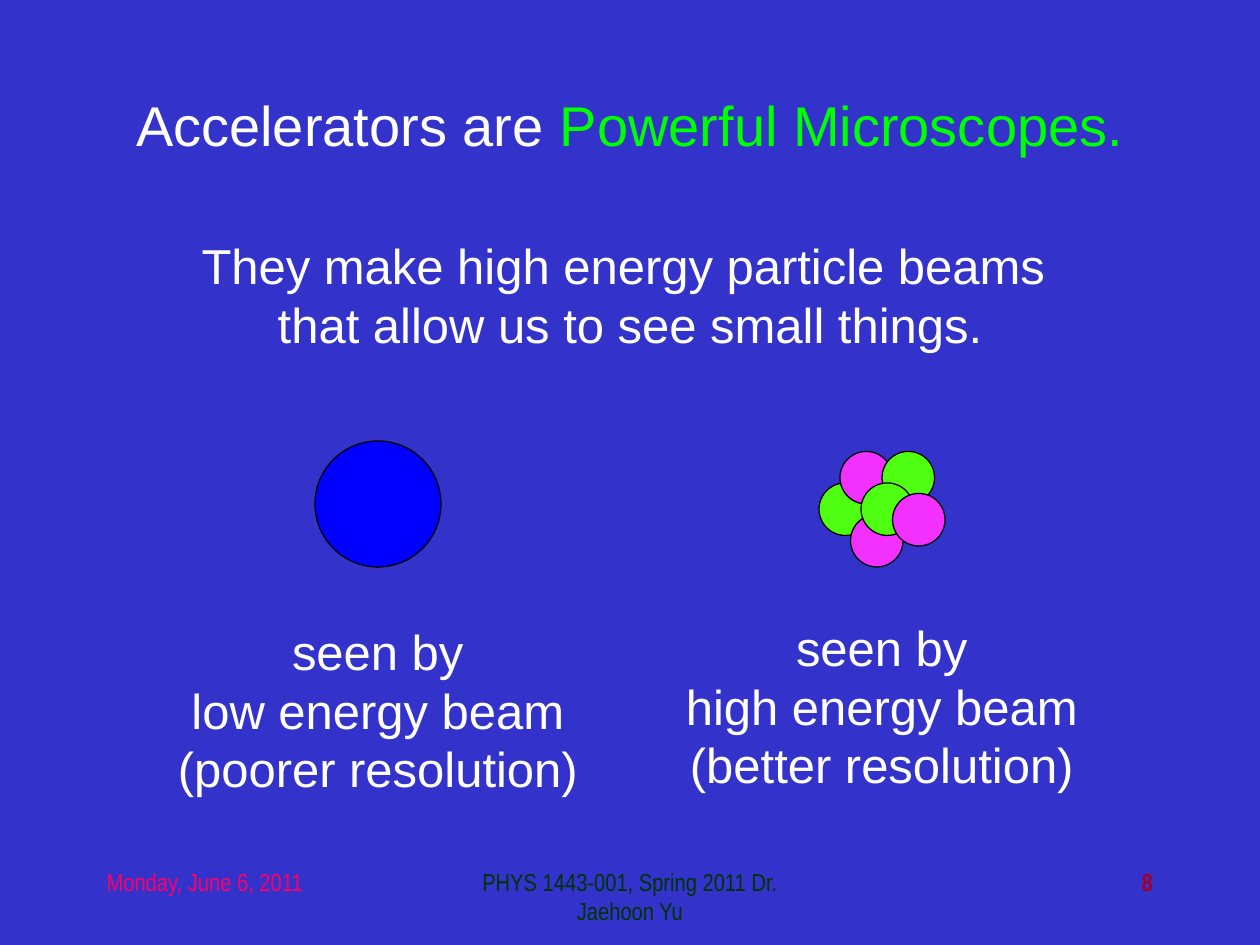
from pptx import Presentation
from pptx.dml.color import RGBColor
from pptx.enum.shapes import MSO_SHAPE as Shape
from pptx.enum.text import MSO_ANCHOR as Anchor, MSO_AUTO_SIZE as AutoSize, PP_ALIGN as Align
from pptx.util import Cm, Pt

BACKGROUND = RGBColor(0x33, 0x33, 0xCC)
WHITE = RGBColor(0xFF, 0xFF, 0xFF)
BLACK = RGBColor(0, 0, 0)
BRIGHT_GREEN = RGBColor(0, 0xFF, 0)
BLUE = RGBColor(0, 0, 0xFF)
GREEN = RGBColor(0x4E, 0xFF, 0x11)
MAGENTA = RGBColor(0xF2, 0x30, 0xFF)
DATE_PINK = RGBColor(0xFF, 0, 0x66)
FOOTER_GREEN = RGBColor(0, 0x33, 0)
NUMBER_RED = RGBColor(0xA5, 0, 0x21)

LINE_FACTOR = 1.2
NUCLEON_STEP = 0.2117
NUCLEUS_LEFT, NUCLEUS_TOP = 16.51, 9.1
NUCLEONS = [
    (0, 3, GREEN),
    (2, 0, MAGENTA),
    (3, 6, MAGENTA),
    (6, 0, GREEN),
    (4, 3, GREEN),
    (7, 4, MAGENTA),
]


def write(sp, paragraphs, size, font="Arial", align=Align.CENTER, bold=False):
    tf = sp.text_frame
    tf.word_wrap = True
    tf.auto_size = AutoSize.NONE
    tf.vertical_anchor = Anchor.TOP
    for i, runs in enumerate(paragraphs):
        p = tf.paragraphs[0] if i == 0 else tf.add_paragraph()
        p.alignment = align
        p.line_spacing = Pt(size * LINE_FACTOR)
        for text, color in runs:
            r = p.add_run()
            r.text = text
            r.font.name = font
            r.font.size = Pt(size)
            r.font.bold = bold
            r.font.color.rgb = color


def add_title(s, runs):
    sp = s.shapes.title
    sp.left, sp.top, sp.width, sp.height = Cm(0), Cm(1.7), Cm(25.4), Cm(1.6)
    write(sp, [runs], 32)


def add_lines(s, left, top, width, height, lines):
    sp = s.shapes.add_textbox(Cm(left), Cm(top), Cm(width), Cm(height))
    write(sp, [[(line, WHITE)] for line in lines], 28)


def add_footer(s, left, width, text, color, align, bold=False):
    sp = s.shapes.add_textbox(Cm(left), Cm(17.35), Cm(width), Cm(1.27))
    write(sp, [[(text, color)]], 14, "Arial Narrow", align, bold)


def add_ball(shapes, left, top, diameter, color):
    sp = shapes.add_shape(Shape.OVAL, Cm(left), Cm(top), Cm(diameter), Cm(diameter))
    sp.shadow.inherit = False
    sp.fill.solid()
    sp.fill.fore_color.rgb = color
    sp.line.color.rgb = BLACK
    sp.line.width = Pt(0.75)


def add_nucleus(s):
    group = s.shapes.add_group_shape()
    for col, row, color in NUCLEONS:
        add_ball(group.shapes, NUCLEUS_LEFT + col * NUCLEON_STEP,
                 NUCLEUS_TOP + row * NUCLEON_STEP, 5 * NUCLEON_STEP, color)


def main():
    prs = Presentation()
    prs.slide_width, prs.slide_height = Cm(25.4), Cm(19.05)
    s = prs.slides.add_slide(prs.slide_layouts[5])
    s.background.fill.solid()
    s.background.fill.fore_color.rgb = BACKGROUND

    add_footer(s, 1.9, 5.29, "Monday, June 6, 2011", DATE_PINK, Align.LEFT)
    add_footer(s, 8.68, 8.04, "PHYS 1443-001, Spring 2011 Dr. Jaehoon Yu",
               FOOTER_GREEN, Align.CENTER)
    add_footer(s, 18.2, 5.29, "8", NUMBER_RED, Align.RIGHT, bold=True)

    add_ball(s.shapes, 6.35, 8.89, 2.54, BLUE)
    add_nucleus(s)

    add_title(s, [("Accelerators are ", WHITE), ("Powerful Microscopes.", BRIGHT_GREEN)])
    add_lines(s, 0, 4.62, 25.4, 2.62,
              ["They make high energy particle beams ", "that allow us to see small things."])
    add_lines(s, 13.12, 12.32, 9.31, 3.81,
              ["seen by", "high energy beam", "(better resolution)"])
    add_lines(s, 2.96, 12.4, 9.31, 3.81,
              ["seen by", "low energy beam", "(poorer resolution)"])
    prs.save("out.pptx")


if __name__ == "__main__":
    main()
